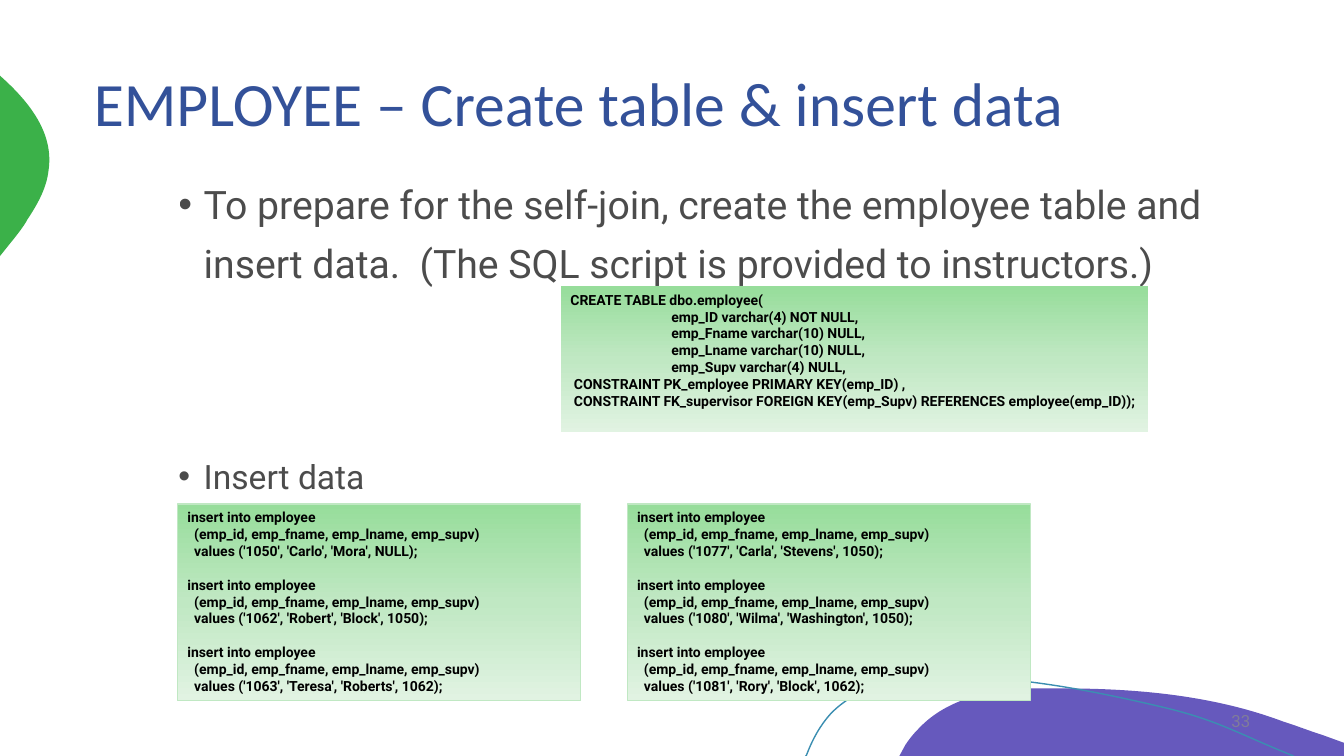
from copy import deepcopy
from dataclasses import dataclass

from lxml import etree
from pptx import Presentation
from pptx import util as u
from pptx.dml.color import RGBColor
from pptx.enum import shapes, text
from pptx.oxml.ns import qn

Point = tuple[float, float]
GRADIENT = ((0, "97DD9B"), (0.5, "C0E8C3"), (1, "E1F3E2"))


@dataclass
class Curve:
    width: float
    start: Point
    segments: list[tuple[Point, ...]]
    fill: str = ""
    line: str = ""


@dataclass
class CodeBox:
    left: float
    top: float
    width: float
    height: float
    lines: list[str]
    line: str = ""


CURVES = [
    Curve(4.41, (10.54, 6.83), [
        ((11.28, 6.83), (12.04, 6.9), (12.73, 7.16)),
        ((12.86, 7.2), (12.98, 7.25), (13.11, 7.29)),
        ((13.33, 7.37),), ((13.33, 7.5),), ((8.92, 7.5),), ((8.98, 7.39),),
        ((9.02, 7.33), (9.06, 7.28), (9.11, 7.23)),
        ((9.39, 6.93), (9.82, 6.84), (10.23, 6.83)),
        ((10.33, 6.83), (10.43, 6.83), (10.54, 6.83)),
    ], fill="6659BD"),
    Curve(0.49, (0, 0.75), [
        ((0.01, 0.76),),
        ((0.3, 1.02), (0.54, 1.33), (0.48, 1.7)),
        ((0.46, 1.87), (0.37, 2.03), (0.27, 2.18)),
        ((0.24, 2.24), (0.17, 2.33), (0.08, 2.44)),
        ((0, 2.54),),
    ], fill="3BB149"),
    Curve(4.83, (7.99, 7.5), [
        ((8, 7.49),),
        ((8.06, 7.33), (8.14, 7.19), (8.24, 7.08)),
        ((8.5, 6.81), (8.89, 6.73), (9.26, 6.72)),
        ((9.55, 6.72),),
        ((10.22, 6.72), (11, 6.89), (11.55, 7.02)),
        ((12.09, 7.15), (12.26, 7.27), (12.83, 7.5)),
    ], line="3B8EB1"),
]

CREATE_LINES = [
    "CREATE TABLE dbo.employee(",
    "\temp_ID varchar(4) NOT NULL,",
    "\temp_Fname varchar(10) NULL,",
    "\temp_Lname varchar(10) NULL,",
    "\temp_Supv varchar(4) NULL,",
    " CONSTRAINT PK_employee PRIMARY KEY(emp_ID) ,",
    " CONSTRAINT FK_supervisor FOREIGN KEY(emp_Supv) REFERENCES employee(emp_ID));",
]
FIRST_ROWS = ["'1050', 'Carlo', 'Mora', NULL", "'1062', 'Robert', 'Block', 1050",
              "'1063', 'Teresa', 'Roberts', 1062"]
SECOND_ROWS = ["'1077', 'Carla', 'Stevens', 1050", "'1080', 'Wilma', 'Washington', 1050",
               "'1081', 'Rory', 'Block', 1062"]


def insert_lines(rows: list[str]) -> list[str]:
    return [line for row in rows for line in (
        "insert into employee",
        "  (emp_id, emp_fname, emp_lname, emp_supv)",
        f"  values ({row});",
    )]


CODE_BOXES = [
    CodeBox(5.56, 2.84, 5.83, 1.45, CREATE_LINES),
    CodeBox(1.76, 5, 4, 1.95, insert_lines(FIRST_ROWS), "C0E8C3"),
    CodeBox(6.22, 5, 4, 1.95, insert_lines(SECOND_ROWS), "C0E8C3"),
]


def colour(value: str) -> RGBColor:
    return RGBColor.from_string(value)


def place(shape, left: float, top: float, width: float, height: float) -> None:
    shape.left, shape.top = u.Inches(left), u.Inches(top)
    shape.width, shape.height = u.Inches(width), u.Inches(height)


def prepare_frame(shape, anchor):
    frame = shape.text_frame
    frame.word_wrap = True
    frame.auto_size = text.MSO_AUTO_SIZE.NONE
    frame.vertical_anchor = anchor
    return frame


def write(frame, content: str, *, size: float, color: str, font: str = "Roboto",
          bold: bool = False, opacity: int = 100, align=text.PP_ALIGN.LEFT,
          spacing: float = 1.0, before: float = 0, bullet: str = "") -> None:
    para = frame.paragraphs[0]
    if para.runs:
        para = frame.add_paragraph()
    para.alignment = align
    para.line_spacing = spacing
    para.space_before, para.space_after = u.Pt(before), u.Pt(0)
    properties = para._p.get_or_add_pPr()
    if bullet:
        properties.set("marL", str(u.Inches(0.25)))
        properties.set("indent", str(-u.Inches(0.25)))
        etree.SubElement(properties, qn("a:buChar")).set("char", bullet)
    if content.startswith("\t"):
        tabs = etree.SubElement(properties, qn("a:tabLst"))
        etree.SubElement(tabs, qn("a:tab"), pos=str(u.Inches(1)), algn="l")
    span = para.add_run()
    span.text = content
    span.font.name, span.font.size, span.font.bold = font, u.Pt(size), bold
    span.font.color.rgb = colour(color)
    if opacity < 100:
        tint = span._r.find(".//" + qn("a:srgbClr"))
        etree.SubElement(tint, qn("a:alpha")).set("val", str(opacity * 1000))


def paint(shape, fill: str, line: str, width: float) -> None:
    shape.shadow.inherit = False
    if fill:
        shape.fill.solid()
        shape.fill.fore_color.rgb = colour(fill)
    else:
        shape.fill.background()
    if line:
        shape.line.color.rgb = colour(line)
        shape.line.width = u.Pt(width)
    else:
        shape.line.fill.background()


def draw_curve(page, curve: Curve) -> None:
    builder = page.shapes.build_freeform(u.Inches(curve.start[0]), u.Inches(curve.start[1]))
    vertices = [(u.Inches(x), u.Inches(y)) for segment in curve.segments for x, y in segment]
    builder.add_line_segments(vertices, close=bool(curve.fill))
    shape = builder.convert_to_shape()
    outline = shape._element.spPr.find(".//" + qn("a:path"))
    steps = iter(outline.findall(qn("a:lnTo")))
    for segment in curve.segments:
        group = [next(steps) for _ in segment]
        if len(group) == 3:
            bend = etree.Element(qn("a:cubicBezTo"))
            group[0].addprevious(bend)
            for step in group:
                bend.append(step[0])
                outline.remove(step)
    shape.width = u.Inches(curve.width)
    outline.set("w", str(shape.width))
    paint(shape, curve.fill, curve.line, 1)


def draw_code(page, code: CodeBox) -> None:
    box = page.shapes.add_shape(shapes.MSO_SHAPE.RECTANGLE, 0, 0, 0, 0)
    place(box, code.left, code.top, code.width, code.height)
    paint(box, "", code.line, 0.75)
    box.fill.gradient()
    box.fill.gradient_angle = 270
    stops = box._element.spPr.find(".//" + qn("a:gsLst"))
    stops.append(deepcopy(stops[0]))
    for stop, (position, value) in zip(box.fill.gradient_stops, GRADIENT):
        stop.position = position
        stop.color.rgb = colour(value)
    frame = prepare_frame(box, text.MSO_ANCHOR.TOP)
    for index, line in enumerate(code.lines):
        new_statement = index > 0 and line.startswith("insert")
        write(frame, line, size=10, color="000000", bold=True, before=12 if new_statement else 0)


def main() -> None:
    deck = Presentation()
    deck.slide_width, deck.slide_height = u.Inches(13.33), u.Inches(7.5)
    page = deck.slides.add_slide(deck.slide_layouts[1])
    for curve in CURVES:
        draw_curve(page, curve)

    title, body = page.shapes.title, page.placeholders[1]
    place(title, 0.83, 0.22, 11.67, 1.67)
    write(prepare_frame(title, text.MSO_ANCHOR.MIDDLE), "EMPLOYEE – Create table & insert data",
          size=44, color="335199", font="Calibri", spacing=0.9)

    place(body, 1.67, 1.62, 10.83, 5.33)
    frame = prepare_frame(body, text.MSO_ANCHOR.TOP)
    bullet = dict(color="000000", opacity=70, spacing=1.25, bullet="•")
    write(frame, "To prepare for the self-join, create the employee table and insert data.  "
          "(The SQL script is provided to instructors.)", size=28, **bullet)
    write(frame, "Insert data", size=24, before=114, **bullet)

    number = page.shapes.add_textbox(0, 0, 0, 0)
    place(number, 10.83, 6.95, 1.67, 0.4)
    write(prepare_frame(number, text.MSO_ANCHOR.MIDDLE), "33", size=12, color="8C8C8C",
          opacity=70, align=text.PP_ALIGN.RIGHT)

    for code in CODE_BOXES:
        draw_code(page, code)
    deck.save("out.pptx")


if __name__ == "__main__":
    main()
